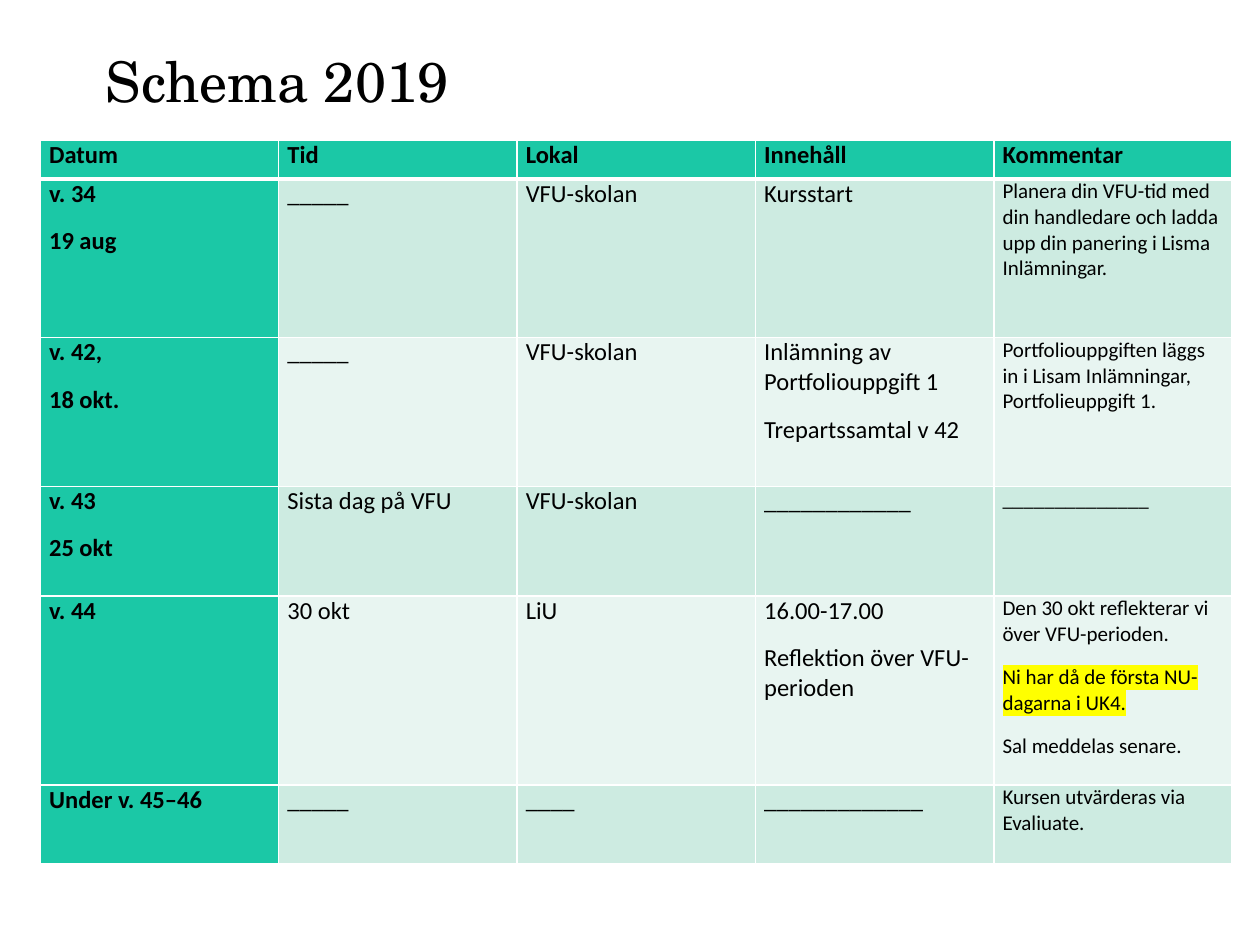
from dataclasses import dataclass

from lxml.etree import SubElement
from pptx import Presentation
from pptx.dml.color import RGBColor as RGB
from pptx.enum.text import MSO_ANCHOR as Anchor, MSO_AUTO_SIZE as AutoSize, PP_ALIGN as Align
from pptx.oxml import parse_xml
from pptx.oxml.ns import nsdecls, qn
from pptx.util import Inches, Pt


@dataclass(frozen=True)
class Theme:
    head_font: str = "TeX Gyre Schola"
    body_font: str = "Calibri"
    ink: str = "000000"
    accent: str = "1BC8A6"
    bands: tuple = ("CDEBE1", "E8F5F1")
    border: str = "FFFFFF"
    mark: str = "FFFF00"
    title: int = 32
    body: int = 14
    small: int = 12
    thin: int = 1
    thick: int = 3


THEME = Theme()
UNIT = 0.1  # inches per grid step; the slide is 100 columns by 75 rows


def grid(steps):
    return Inches(steps * UNIT)


def write(tf, text, *, font, size, bold=False, after=0, marked=None):
    """Fill a text frame, one paragraph per line; highlight the marked line."""
    for i, line in enumerate(text.split("\n")):
        p = tf.paragraphs[0] if i == 0 else tf.add_paragraph()
        p.alignment = Align.LEFT
        p.space_before, p.space_after = Pt(0), Pt(after)
        p.line_spacing = 1.0
        r = p.add_run()
        r.text = line
        r.font.name, r.font.size, r.font.bold = font, Pt(size), bold
        r.font.color.rgb = RGB.from_string(THEME.ink)
        if line == marked:
            r.font._element.find(qn("a:solidFill")).addnext(parse_xml(
                f'<a:highlight {nsdecls("a")}><a:srgbClr val="{THEME.mark}"/></a:highlight>'))


class Deck:
    def __init__(self, theme):
        self.theme = theme
        self.prs = Presentation()
        self.prs.slide_width, self.prs.slide_height = grid(100), grid(75)
        self.s = self.prs.slides.add_slide(self.prs.slide_layouts[5])

    def title(self, text, x, y, w, h):
        sp = self.s.shapes.title
        sp.left, sp.top, sp.width, sp.height = map(grid, (x, y, w, h))
        tf = sp.text_frame
        tf.auto_size, tf.word_wrap = AutoSize.NONE, False
        tf.vertical_anchor = Anchor.TOP
        write(tf, text, font=self.theme.head_font, size=self.theme.title)

    def borders(self, cell, top, bottom):
        tc_pr = cell._tc.get_or_add_tcPr()
        widths = {"lnL": self.theme.thin, "lnR": self.theme.thin, "lnT": top, "lnB": bottom}
        for i, (tag, width) in enumerate(widths.items()):
            ln = SubElement(tc_pr, qn(f"a:{tag}"), w=str(Pt(width)))
            fill = SubElement(ln, qn("a:solidFill"))
            SubElement(fill, qn("a:srgbClr"), val=self.theme.border)
            tc_pr.insert(i, ln)

    def table(self, rows, heights, x, y, w, marked):
        t = self.theme
        cols = len(rows[0])
        table = self.s.shapes.add_table(
            len(rows), cols, grid(x), grid(y), grid(w), grid(sum(heights))).table
        table.first_row = table.horz_banding = False
        for column in table.columns:
            column.width = grid(w / cols)
        for i, (row, height) in enumerate(zip(rows, heights)):
            table.rows[i].height = grid(height)
            for j, text in enumerate(row):
                cell = table.cell(i, j)
                is_head = i == 0 or j == 0
                is_comment = i > 0 and j == cols - 1
                cell.margin_left = cell.margin_right = grid(0.7)
                cell.margin_top = cell.margin_bottom = 0
                cell.fill.solid()
                cell.fill.fore_color.rgb = RGB.from_string(
                    t.accent if is_head else t.bands[(i - 1) % 2])
                self.borders(cell, top=t.thick if i == 1 else t.thin,
                             bottom=t.thick if i == 0 else t.thin)
                write(cell.text_frame, text, font=t.body_font, bold=is_head, after=10,
                      size=t.small if is_comment else t.body, marked=marked)


MARKED = "Ni har då de första NU-dagarna i UK4."
SCHEDULE = [
    ("Datum", "Tid", "Lokal", "Innehåll", "Kommentar"),
    ("v. 34\n19 aug", "_____", "VFU-skolan", "Kursstart",
     "Planera din VFU-tid med din handledare och ladda upp din panering i Lisma Inlämningar."),
    ("v. 42,\n18 okt.", "_____", "VFU-skolan",
     "Inlämning av Portfoliouppgift 1\nTrepartssamtal v 42",
     "Portfoliouppgiften läggs in i Lisam Inlämningar, Portfolieuppgift 1."),
    ("v. 43\n25 okt", "Sista dag på VFU", "VFU-skolan", "____________", "______________"),
    ("v. 44", "30 okt", "LiU", "16.00-17.00\nReflektion över VFU-perioden",
     f"Den 30 okt reflekterar vi över VFU-perioden.\n{MARKED}\nSal meddelas senare."),
    ("Under v. 45–46", "_____", "____", "_____________", "Kursen utvärderas via Evaliuate."),
]
ROW_HEIGHTS = (3.1, 12.6, 11.8, 8.7, 15, 6.3)


def main():
    deck = Deck(THEME)
    # Schedule table
    deck.table(SCHEDULE, ROW_HEIGHTS, x=3.2, y=11.1, w=94.6, marked=MARKED)
    # Heading
    deck.title("Schema 2019", x=7.4, y=3.2, w=37.5, h=6.4)
    deck.prs.save("out.pptx")


if __name__ == "__main__":
    main()
